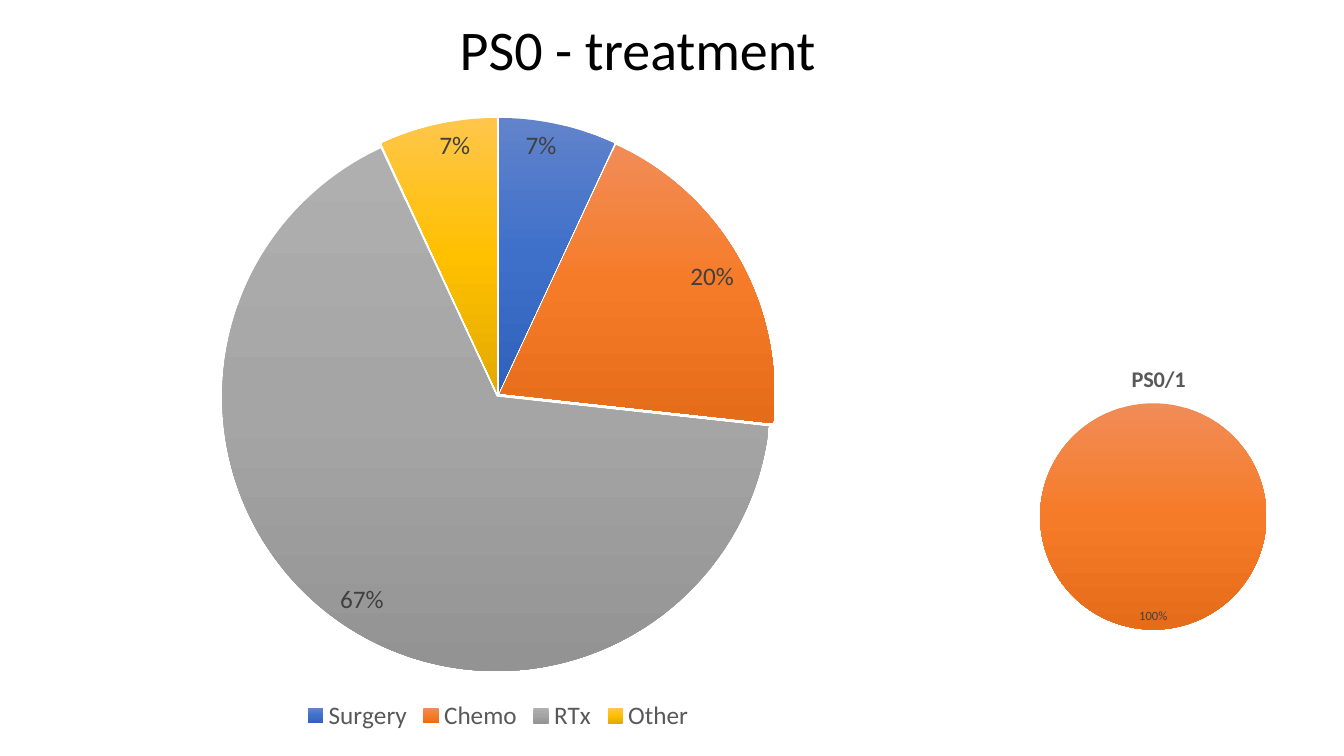
from pptx import Presentation
from pptx.chart.data import CategoryChartData
from pptx.dml.color import RGBColor
from pptx.enum.chart import XL_CHART_TYPE as ChartType
from pptx.enum.chart import XL_LABEL_POSITION as LabelPosition
from pptx.enum.chart import XL_LEGEND_POSITION as LegendPosition
from pptx.enum.text import MSO_ANCHOR as Anchor
from pptx.enum.text import PP_ALIGN as Align
from pptx.oxml import parse_xml
from pptx.oxml.ns import nsdecls
from pptx.util import Cm, Pt

FONT = "Calibri"
COLORS = {"title": "000000", "caption": "595959", "label": "404040"}
SLICE_GRADIENTS = [
    ("6183CB", "3E70CA", "3062BB"),
    ("F18C57", "F67B28", "E56C19"),
    ("AFAFAF", "A5A5A5", "939393"),
    ("FFC64B", "FFC000", "E3AB00"),
    ("71A6DB", "559BDB", "448ACA"),
]
TITLE = {"text": "PS0 - treatment", "box": (11.33, 0.23, 10.03, 1.96)}
# Boxes are left, top, width, height in cm; plots are fractions of the box.
PIES = [
    {
        "box": (2.29, 2.62, 20.52, 15.93),
        "plot": (0.16, 0.02, 0.68, 0.88),
        "values": {"Surgery": 7, "Chemo": 20, "RTx": 67, "Other": 7},
        "label_size": 18,
        "legend_size": 18,
        "explosion": 1,
    },
    {
        "box": (24.99, 8.51, 8.15, 7.77),
        "plot": (0.15, 0.21, 0.7, 0.74),
        "values": {"1": 0, "2": 100, "3": 0, "4": 0, "5": 0},
        "label_size": 9,
        "title": "PS0/1",
        "title_place": (0.42, 0.07),
    },
]


def style_font(font, size, color, bold=False):
    font.name, font.size, font.bold = FONT, Pt(size), bold
    font.color.rgb = RGBColor.from_string(COLORS[color])


def write_text(frame, text, **style):
    paragraph = frame.paragraphs[0]
    run = paragraph.add_run()
    run.text = text
    style_font(run.font, **style)
    return paragraph


def manual_layout(place):
    """Return a layout element for x, y and, if given, width and height."""
    target = '<c:layoutTarget val="inner"/>' if len(place) == 4 else ""
    modes = '<c:xMode val="edge"/><c:yMode val="edge"/>'
    sizes = "".join(f'<c:{name} val="{value}"/>' for name, value in zip("xywh", place))
    return parse_xml(f'<c:layout {nsdecls("c")}><c:manualLayout>{target}{modes}{sizes}'
                     "</c:manualLayout></c:layout>")


def set_layout(parent, place, index):
    for old in parent.xpath("c:layout"):
        parent.remove(old)
    parent.insert(index, manual_layout(place))


def fill_slice(series, index, gradient):
    series.points[index].format.fill
    properties = series._element.xpath(f'c:dPt[c:idx/@val="{index}"]/c:spPr')[0]
    stops = "".join(f'<a:gs pos="{position}"><a:srgbClr val="{color}"/></a:gs>'
                    for position, color in zip((0, 50000, 100000), gradient))
    properties.insert(0, parse_xml(
        f'<a:gradFill {nsdecls("a")}><a:gsLst>{stops}</a:gsLst>'
        '<a:lin ang="5400000" scaled="0"/></a:gradFill>'))


def add_pie(slide, pie):
    data = CategoryChartData()
    data.categories = list(pie["values"])
    data.add_series("Series 1", list(pie["values"].values()))
    box = [Cm(length) for length in pie["box"]]
    chart = slide.shapes.add_chart(ChartType.PIE, *box, data).chart
    style_font(chart.font, 10, "title")

    plot = chart.plots[0]
    plot.vary_by_categories = True
    series = plot.series[0]
    for index in range(len(pie["values"])):
        fill_slice(series, index, SLICE_GRADIENTS[index])
    if "explosion" in pie:
        series._element.xpath("c:dPt")[0].addprevious(
            parse_xml(f'<c:explosion {nsdecls("c")} val="{pie["explosion"]}"/>'))

    labels = series.data_labels
    labels.show_value = True
    labels.number_format = '0"%";;'  # zero slices carry no label
    labels.number_format_is_linked = False
    labels.position = LabelPosition.INSIDE_END
    style_font(labels.font, pie["label_size"], "label")

    chart.has_legend = "legend_size" in pie
    if chart.has_legend:
        chart.legend.position = LegendPosition.BOTTOM
        chart.legend.include_in_layout = False
        style_font(chart.legend.font, pie["legend_size"], "caption")

    chart.has_title = "title" in pie
    if chart.has_title:
        write_text(chart.chart_title.text_frame, pie["title"],
                   size=16, color="caption", bold=True)
        set_layout(chart._chartSpace.xpath("c:chart/c:title")[0], pie["title_place"], 1)
    set_layout(chart._chartSpace.xpath("c:chart/c:plotArea")[0], pie["plot"], 0)


def add_title(slide):
    title = slide.shapes.title
    title.left, title.top, title.width, title.height = map(Cm, TITLE["box"])
    frame = title.text_frame
    frame.word_wrap = False
    frame.vertical_anchor = Anchor.TOP
    paragraph = write_text(frame, TITLE["text"], size=40, color="title")
    paragraph.alignment = Align.LEFT


def main():
    presentation = Presentation()
    presentation.slide_width, presentation.slide_height = Cm(33.87), Cm(19.05)
    slide = presentation.slides.add_slide(presentation.slide_layouts[5])
    for pie in PIES:
        add_pie(slide, pie)
    add_title(slide)
    presentation.save("out.pptx")


if __name__ == "__main__":
    main()
